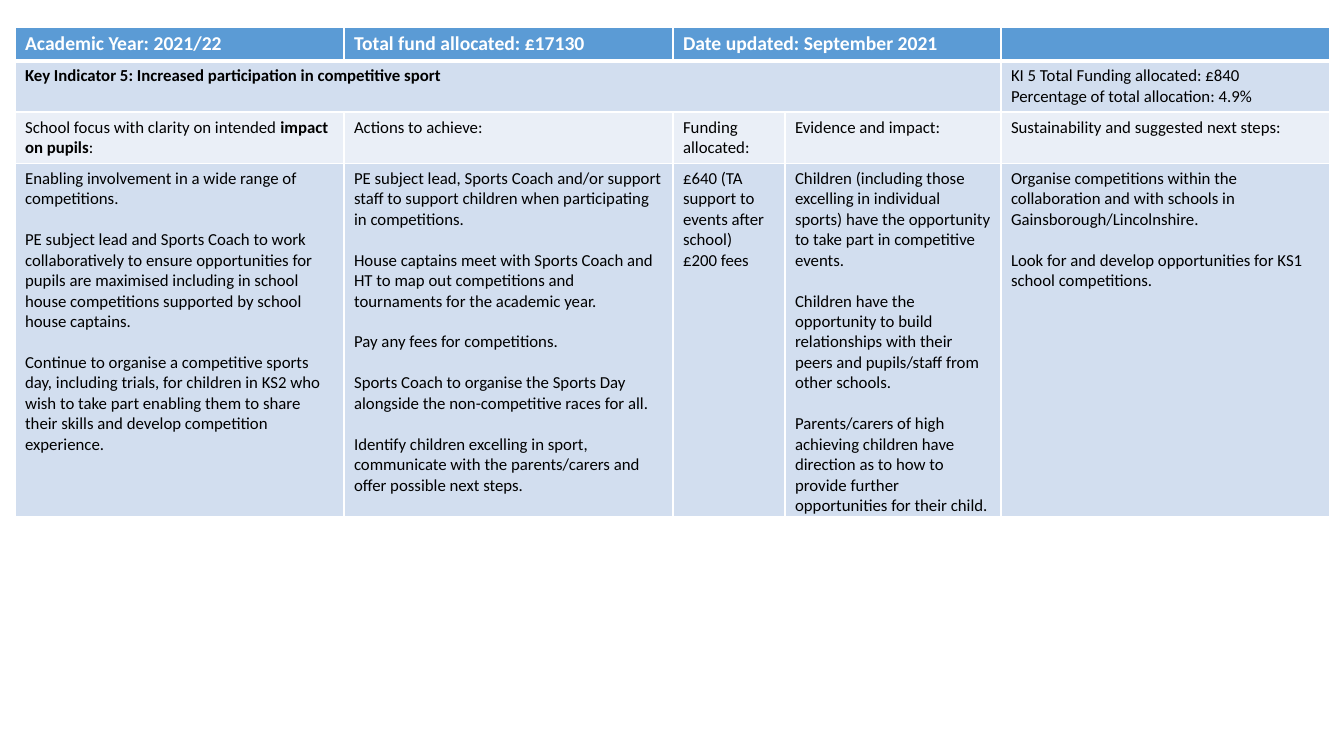
from dataclasses import dataclass

from lxml.etree import SubElement
from pptx import Presentation
from pptx.dml.color import RGBColor
from pptx.oxml.ns import qn
from pptx.util import Pt

EMU_PER_PX = 12192000 / 1344


@dataclass(frozen=True)
class Theme:
    """Colours, type sizes and line widths of the slide."""

    font: str = "Calibri"
    heading_size: int = 14
    body_size: int = 12
    paragraph_gap: float = 14.65
    heading_fill: str = "5B9BD5"
    dark_band: str = "D2DEEF"
    light_band: str = "EAEFF7"
    white: str = "FFFFFF"
    black: str = "000000"
    border: int = 1
    heading_border: int = 3


THEME = Theme()
COLUMNS = [329, 329, 112, 216, 329]
ROWS = [33, 49, 50, 352]
FILLS = [THEME.heading_fill, THEME.dark_band, THEME.light_band, THEME.dark_band]
MERGES = [((0, 2), (0, 3)), ((1, 0), (1, 3))]

CONTENT = [
    [
        ["Academic Year: 2021/22"],
        ["Total fund allocated: £17130"],
        ["Date updated: September 2021"],
        [],
        [],
    ],
    [
        [[("Key Indicator 5: Increased participation in competitive sport", True)]],
        [],
        [],
        [],
        ["KI 5 Total Funding allocated: £840", "Percentage of total allocation: 4.9%"],
    ],
    [
        [[("School focus with clarity on intended ", False), ("impact on pupils", True), (":", False)]],
        ["Actions to achieve:"],
        ["Funding allocated:"],
        ["Evidence and impact:"],
        ["Sustainability and suggested next steps:"],
    ],
    [
        [
            "Enabling involvement in a wide range of competitions.",
            "PE subject lead and Sports Coach to work collaboratively to ensure opportunities for pupils "
            "are maximised including in school house competitions supported by school house captains.",
            "Continue to organise a competitive sports day, including trials, for children in KS2 who wish "
            "to take part enabling them to share their skills and develop competition experience.",
        ],
        [
            "PE subject lead, Sports Coach and/or support staff to support children when participating "
            "in competitions.",
            "House captains meet with Sports Coach and HT to map out competitions and tournaments for "
            "the academic year.",
            "Pay any fees for competitions.",
            "Sports Coach to organise the Sports Day alongside the non-competitive races for all.",
            "Identify children excelling in sport, communicate with the parents/carers and offer possible "
            "next steps.",
        ],
        ["£640 (TA support to events after school)", "£200 fees"],
        [
            "Children (including those excelling in individual sports) have the opportunity to take part "
            "in competitive events.",
            "Children have the opportunity to build relationships with their peers and pupils/staff from "
            "other schools.",
            "Parents/carers of high achieving children have direction as to how to provide further "
            "opportunities for their child.",
        ],
        [
            "Organise competitions within the collaboration and with schools in Gainsborough/Lincolnshire.",
            "Look for and develop opportunities for KS1 school competitions.",
        ],
    ],
]


def px(length):
    """Turn pixels into EMU."""
    return round(length * EMU_PER_PX)


def set_attributes(target, values):
    """Set each named attribute on the target."""
    for name, value in values.items():
        setattr(target, name, value)


def add_borders(cell, widths):
    """Draw white cell borders with the given widths in points."""
    properties = cell._tc.get_or_add_tcPr()
    for side, width in widths.items():
        line = SubElement(properties, qn(f"a:ln{side}"), w=str(Pt(width)))
        fill = SubElement(line, qn("a:solidFill"))
        SubElement(fill, qn("a:srgbClr"), val=THEME.white)


def style_cell(cell, row):
    """Give a cell the borders, fill and margins of its row."""
    widths = dict.fromkeys("LRTB", THEME.border)
    if row == 0:
        widths["B"] = THEME.heading_border
    elif row == 1:
        widths["T"] = THEME.heading_border
    add_borders(cell, widths)
    cell.fill.solid()
    cell.fill.fore_color.rgb = RGBColor.from_string(FILLS[row])
    if row == len(ROWS) - 1:
        cell.margin_bottom = 0


def write_paragraph(paragraph, content, heading):
    """Write a string or a list of (text, bold) runs."""
    runs = [(content, heading)] if isinstance(content, str) else content
    for text, bold in runs:
        run = paragraph.add_run()
        run.text = text
        set_attributes(run.font, {
            "name": THEME.font,
            "size": Pt(THEME.heading_size if heading else THEME.body_size),
            "bold": bold,
        })
        run.font.color.rgb = RGBColor.from_string(THEME.white if heading else THEME.black)


def write_cell(cell, paragraphs, heading, spaced):
    """Fill a cell with paragraphs, spaced apart where asked."""
    frame = cell.text_frame
    if not paragraphs:
        SubElement(frame.paragraphs[0]._p, qn("a:endParaRPr"), sz=str(THEME.body_size * 100))
    for index, content in enumerate(paragraphs):
        paragraph = frame.add_paragraph() if index else frame.paragraphs[0]
        if index and spaced:
            paragraph.space_before = Pt(THEME.paragraph_gap)
        write_paragraph(paragraph, content, heading)


def add_plan_table(slide):
    """Add the funding plan table."""
    table = slide.shapes.add_table(
        len(ROWS), len(COLUMNS), px(15), px(27), px(sum(COLUMNS)), px(sum(ROWS))
    ).table
    table.horz_banding = False
    for column, width in zip(table.columns, COLUMNS):
        column.width = px(width)
    for row, height in zip(table.rows, ROWS):
        row.height = px(height)
    for start, end in MERGES:
        table.cell(*start).merge(table.cell(*end))
    for row, cells in enumerate(CONTENT):
        for column, paragraphs in enumerate(cells):
            cell = table.cell(row, column)
            style_cell(cell, row)
            spaced = row == len(ROWS) - 1 and column != 2
            write_cell(cell, paragraphs, row == 0, spaced)


def main():
    """Build and save the presentation."""
    presentation = Presentation()
    set_attributes(presentation, {"slide_width": px(1344), "slide_height": px(756)})
    slide = presentation.slides.add_slide(presentation.slide_layouts[6])
    add_plan_table(slide)
    presentation.save("out.pptx")


if __name__ == "__main__":
    main()
